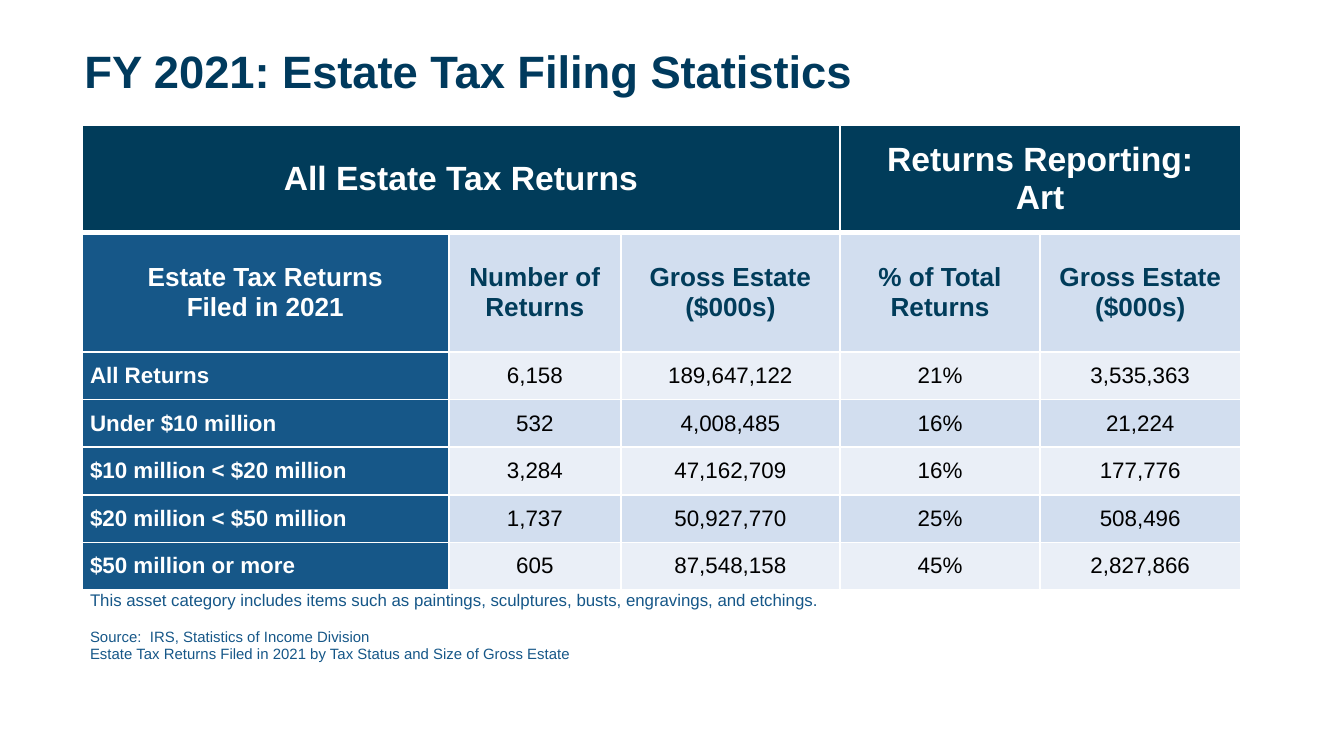
from copy import deepcopy

from lxml.etree import SubElement
from pptx import Presentation
from pptx.dml.color import RGBColor
from pptx.enum.text import MSO_ANCHOR as Anchor, PP_ALIGN as Align
from pptx.oxml.ns import qn
from pptx.util import Inches, Pt

# Widescreen page, in inches
WIDTH = 10
HEIGHT = WIDTH * 9 / 16
FONT = "Arial"

TITLE_NAVY = RGBColor(0x00, 0x3A, 0x5D)
NAVY = RGBColor(0x01, 0x3C, 0x5A)
BLUE = RGBColor(0x16, 0x57, 0x88)
PALE = RGBColor(0xD2, 0xDE, 0xEF)
PALER = RGBColor(0xEA, 0xEF, 0xF7)
WHITE = RGBColor(0xFF, 0xFF, 0xFF)
BLACK = RGBColor(0x00, 0x00, 0x00)

# Table grid, in inches
LEFT, TOP = 0.61, 0.93
COLUMNS = [2.73, 1.28, 1.63, 1.49, 1.49]
DATA_HEIGHT = 1.77
NOTE_HEIGHT = 0.54

GROUPS = [(0, 2, "All Estate Tax Returns"), (3, 4, "Returns Reporting:\nArt")]
HEADINGS = [
    "Estate Tax Returns\nFiled in 2021", "Number of\nReturns",
    "Gross Estate\n($000s)", "% of Total Returns", "Gross Estate ($000s)",
]
DATA = [
    ("All Returns", "6,158", "189,647,122", "21%", "3,535,363"),
    ("Under $10 million", "532", "4,008,485", "16%", "21,224"),
    ("$10 million < $20 million", "3,284", "47,162,709", "16%", "177,776"),
    ("$20 million < $50 million", "1,737", "50,927,770", "25%", "508,496"),
    ("$50 million or more", "605", "87,548,158", "45%", "2,827,866"),
]
NOTE = ("This asset category includes items such as paintings, sculptures, "
        "busts, engravings, and etchings.")
SOURCE = ("Source:  IRS, Statistics of Income Division\n"
          "Estate Tax Returns Filed in 2021 by Tax Status and Size of Gross Estate")


def apply(target, values):
    for name, value in values.items():
        setattr(target, name, value)


def write(para, text, size, color, bold=False, **layout):
    """Fill a paragraph; line breaks take the format of the text."""
    para.text = text
    apply(para, layout)
    for span in para.runs:
        apply(span.font, {"name": FONT, "size": Pt(size), "bold": bold})
        span.font.color.rgb = color
    for line_break in para._p.findall(qn("a:br")):
        line_break.insert(0, deepcopy(para.runs[0]._r.rPr))


def add_title(page, text):
    box = page.shapes.add_textbox(
        Inches(0.053 * WIDTH), Inches(0.054 * HEIGHT),
        Inches(0.878 * WIDTH), Inches(0.087 * HEIGHT))
    frame = box.text_frame
    apply(frame, {"word_wrap": True, "vertical_anchor": Anchor.MIDDLE})
    write(frame.paragraphs[0], text, 24.3, TITLE_NAVY, True, line_spacing=0.9)


def set_borders(cell, top=1, bottom=1):
    properties = cell._tc.get_or_add_tcPr()
    for side, points in (("L", 1), ("R", 1), ("T", top), ("B", bottom)):
        line = SubElement(properties, qn(f"a:ln{side}"), w=str(Pt(points)))
        fill = SubElement(line, qn("a:solidFill"))
        SubElement(fill, qn("a:srgbClr"), val=str(WHITE))


def style_cell(cell, fill, inset=0.06, **borders):
    set_borders(cell, **borders)
    apply(cell, {
        "vertical_anchor": Anchor.MIDDLE,
        "margin_left": Inches(inset), "margin_right": Inches(inset),
        "margin_top": 0, "margin_bottom": 0,
    })
    if fill is None:
        cell.fill.background()
    else:
        cell.fill.solid()
        cell.fill.fore_color.rgb = fill
    return cell.text_frame.paragraphs[0]


def add_grid(page):
    heights = [0.8, 0.89] + [DATA_HEIGHT / len(DATA)] * len(DATA) + [NOTE_HEIGHT]
    table = page.shapes.add_table(
        len(heights), len(COLUMNS), Inches(LEFT), Inches(TOP),
        Inches(sum(COLUMNS)), Inches(sum(heights))).table
    apply(table, {"first_row": False, "horz_banding": False})
    for column, width in zip(table.columns, COLUMNS):
        column.width = Inches(width)
    for row, height in zip(table.rows, heights):
        row.height = Inches(height)
    return table


def fill_headings(table):
    # Column groups
    for first, last, text in GROUPS:
        for index in range(first, last + 1):
            style_cell(table.cell(0, index), NAVY, bottom=3)
        start = table.cell(0, first)
        start.merge(table.cell(0, last))
        write(start.text_frame.paragraphs[0], text, 18, WHITE, True,
              alignment=Align.CENTER)
    # Column headings
    for index, text in enumerate(HEADINGS):
        fill, color = (PALE, NAVY) if index else (BLUE, WHITE)
        para = style_cell(table.cell(1, index), fill, top=3)
        write(para, text, 14, color, True, alignment=Align.CENTER)


def fill_data(table):
    for row, values in enumerate(DATA):
        band = PALE if row % 2 else PALER
        for index, text in enumerate(values):
            cell = table.cell(row + 2, index)
            if index == 0:
                write(style_cell(cell, BLUE), text, 12, WHITE, True)
            else:
                para = style_cell(cell, band, 0.1 if index < 3 else 0)
                write(para, text, 12, BLACK, alignment=Align.CENTER)


def fill_note(table):
    row = len(DATA) + 2
    for index in range(len(COLUMNS)):
        style_cell(table.cell(row, index), None)
    start = table.cell(row, 0)
    start.merge(table.cell(row, len(COLUMNS) - 1))
    frame = start.text_frame
    write(frame.paragraphs[0], NOTE, 9, BLUE)
    write(frame.add_paragraph(), SOURCE, 8, BLUE, space_before=Pt(10))


def main():
    deck = Presentation()
    apply(deck, {"slide_width": Inches(WIDTH), "slide_height": Inches(HEIGHT)})
    page = deck.slides.add_slide(deck.slide_layouts[6])
    add_title(page, "FY 2021: Estate Tax Filing Statistics")
    table = add_grid(page)
    fill_headings(table)
    fill_data(table)
    fill_note(table)
    deck.save("out.pptx")


if __name__ == "__main__":
    main()
